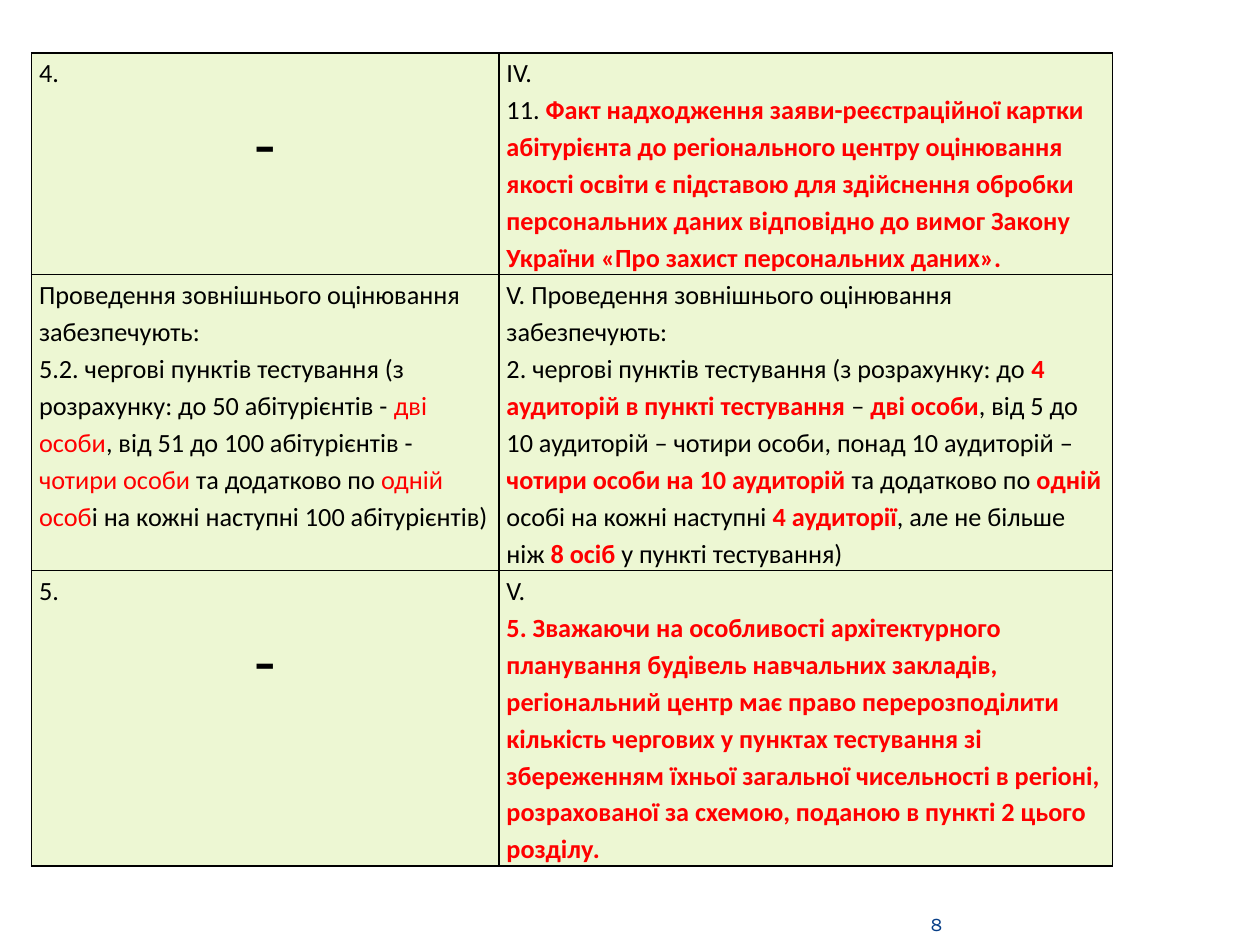
"""Build a slide comparing old and new wording of testing rules in a two-column table."""
from lxml import etree
from pptx import Presentation
from pptx.dml.color import RGBColor
from pptx.enum.text import MSO_ANCHOR, PP_ALIGN
from pptx.oxml.ns import qn
from pptx.util import Inches, Pt

CENTER = PP_ALIGN.CENTER
RIGHT = PP_ALIGN.RIGHT
BOTTOM = MSO_ANCHOR.BOTTOM
COLORS = {"text": "000000", "change": "FF0000", "cell": "EDF7D3",
          "border": "000000", "number": "073E87"}
STYLES = {
    "plain": ("text", False, 15),
    "red": ("change", False, 15),
    "bold": ("change", True, 15),
    "dash": ("text", False, 40),
}
COLUMN_WIDTHS = [3.71, 4.87]
ROW_HEIGHTS = [1.7, 2.27, 2.27]
ROWS = [
    [
        [[("plain", "4.")], [("dash", "-")]],
        [
            [("plain", "ІV.")],
            [
                ("plain", "11. "),
                ("bold", "Факт надходження заяви-реєстраційної картки абітурієнта до "
                         "регіонального центру оцінювання якості освіти є підставою для "
                         "здійснення обробки персональних даних відповідно до вимог Закону "
                         "України «Про захист персональних даних»."),
            ],
        ],
    ],
    [
        [
            [("plain", "Проведення зовнішнього оцінювання забезпечують:")],
            [
                ("plain", "5.2. чергові пунктів тестування (з розрахунку: до 50 абітурієнтів - "),
                ("red", "дві особи"),
                ("plain", ", від 51 до 100 абітурієнтів - "),
                ("red", "чотири особи "),
                ("plain", "та додатково по "),
                ("red", "одній особ"),
                ("plain", "і на кожні наступні 100 абітурієнтів)"),
            ],
        ],
        [
            [("plain", "V. Проведення зовнішнього оцінювання забезпечують:")],
            [
                ("plain", "2. чергові пунктів тестування (з розрахунку: до "),
                ("bold", "4 аудиторій в пункті тестування "),
                ("plain", "– "),
                ("bold", "дві особи"),
                ("plain", ", від 5 до 10 аудиторій – чотири особи, понад 10 аудиторій – "),
                ("bold", "чотири особи на 10 аудиторій "),
                ("plain", "та додатково по "),
                ("bold", "одній "),
                ("plain", "особі на кожні наступні "),
                ("bold", "4 аудиторії"),
                ("plain", ", але не більше ніж "),
                ("bold", "8 осіб "),
                ("plain", "у пункті тестування)"),
            ],
        ],
    ],
    [
        [[("plain", "5.")], [("dash", "-")]],
        [
            [("plain", "V.")],
            [("bold", "5. Зважаючи на особливості архітектурного планування будівель "
                      "навчальних закладів, регіональний центр має право перерозподілити "
                      "кількість чергових у пунктах тестування зі збереженням їхньої "
                      "загальної чисельності в регіоні, розрахованої за схемою, поданою "
                      "в пункті 2 цього розділу.")],
        ],
    ],
]


def style_cell(cell):
    cell.margin_left = cell.margin_right = Inches(0.06)
    cell.margin_top = cell.margin_bottom = 0
    properties = cell._tc.get_or_add_tcPr()
    for side in ("a:lnL", "a:lnR", "a:lnT", "a:lnB"):
        line = etree.SubElement(properties, qn(side), w=str(Pt(1)))
        fill = etree.SubElement(line, qn("a:solidFill"))
        etree.SubElement(fill, qn("a:srgbClr"), val=COLORS["border"])
    cell.fill.solid()
    cell.fill.fore_color.rgb = RGBColor.from_string(COLORS["cell"])


def add_run(paragraph, text, font_name, size, color, bold=False):
    run = paragraph.add_run()
    run.text = text
    run.font.name = font_name
    run.font.size = Pt(size)
    run.font.bold = bold
    run.font.color.rgb = RGBColor.from_string(COLORS[color])


presentation = Presentation()
presentation.slide_width = Inches(10)
presentation.slide_height = Inches(7.5)
slide = presentation.slides.add_slide(presentation.slide_layouts[6])

table = slide.shapes.add_table(
    len(ROWS), len(COLUMN_WIDTHS), Inches(0.25), Inches(0.42),
    Inches(sum(COLUMN_WIDTHS)), Inches(sum(ROW_HEIGHTS))).table
table.first_row = False
table.horz_banding = False
for column, width in zip(table.columns, COLUMN_WIDTHS):
    column.width = Inches(width)
for row, height, contents in zip(table.rows, ROW_HEIGHTS, ROWS):
    row.height = Inches(height)
    for cell, paragraphs in zip(row.cells, contents):
        style_cell(cell)
        for index, runs in enumerate(paragraphs):
            text_frame = cell.text_frame
            paragraph = text_frame.add_paragraph() if index else text_frame.paragraphs[0]
            paragraph.line_spacing = 1.15
            if runs[0][0] == "dash":
                paragraph.alignment = CENTER
            for style, text in runs:
                color, bold, size = STYLES[style]
                add_run(paragraph, text, "Calibri", size, color, bold)

number_box = slide.shapes.add_textbox(Inches(6.84), Inches(7.17), Inches(0.64), Inches(0.25))
number_frame = number_box.text_frame
number_frame.word_wrap = True
number_frame.vertical_anchor = BOTTOM
number_frame.margin_left = number_frame.margin_right = 0
number_frame.margin_top = number_frame.margin_bottom = 0
number_paragraph = number_frame.paragraphs[0]
number_paragraph.alignment = RIGHT
add_run(number_paragraph, "8", "Karla", 11, "number")

presentation.save("out.pptx")
